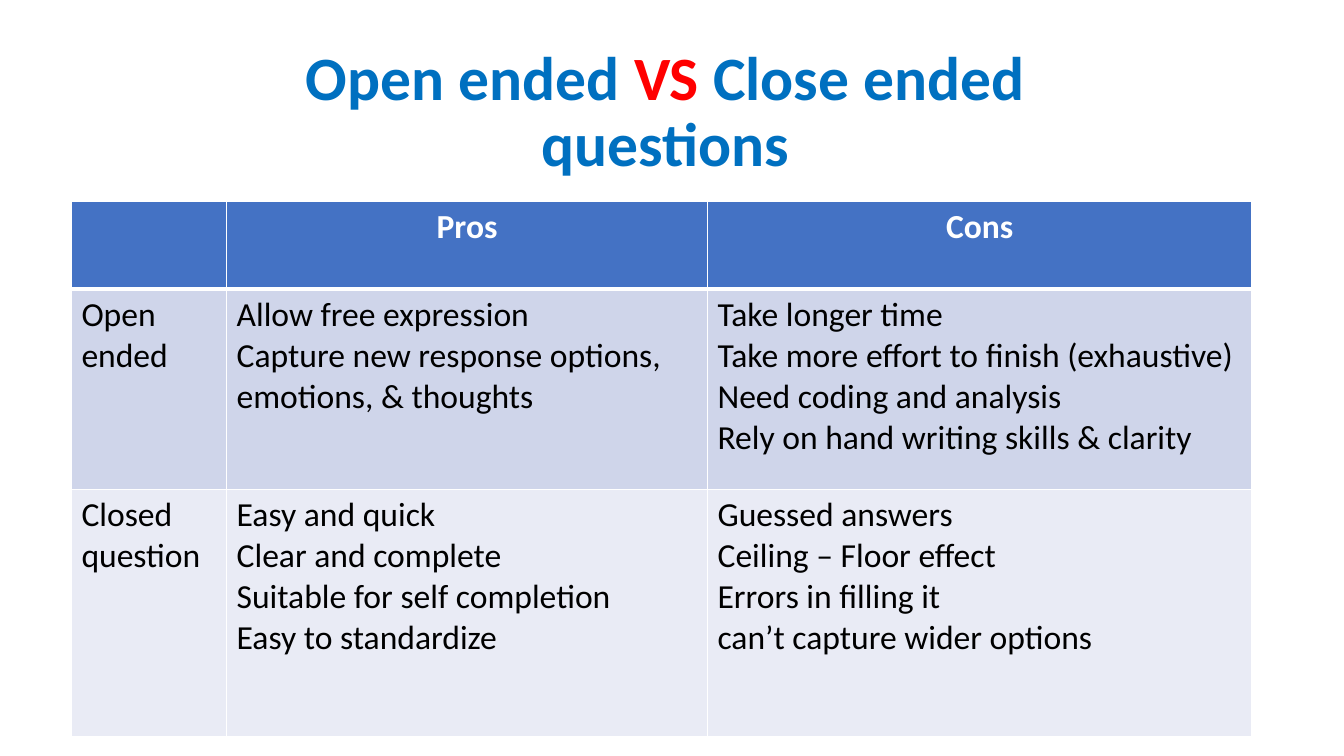
import pptx
import pptx.dml.color
import pptx.enum.text
import pptx.oxml
import pptx.oxml.ns
import pptx.util
from pptx.util import Cm

COLORS = {
    "title": "0070C0",
    "accent": "FF0000",
    "header": "4472C4",
    "open": "CFD5EA",
    "closed": "E9EBF5",
    "white": "FFFFFF",
    "black": "000000",
}

ROWS = [
    ("header", ["", "Pros", "Cons"]),
    ("open", [
        "Open ended",
        "Allow free expression\n"
        "Capture new response options, emotions, & thoughts",
        "Take longer time\n"
        "Take more effort to finish (exhaustive)\n"
        "Need coding and analysis\n"
        "Rely on hand writing skills & clarity",
    ]),
    ("closed", [
        "Closed question",
        "Easy and quick\n"
        "Clear and complete\n"
        "Suitable for self completion\n"
        "Easy to standardize",
        "Guessed answers\n"
        "Ceiling – Floor effect\n"
        "Errors in filling it\n"
        "can’t capture wider options",
    ]),
]


def rgb(name):
    return pptx.dml.color.RGBColor.from_string(COLORS[name])


class SlideBuilder:
    font = "Calibri"
    title_size = 44
    table_size = 24

    def __init__(self, prs):
        self.s = prs.slides.add_slide(prs.slide_layouts[6])

    def style_run(self, r, size, color, bold):
        r.font.name = self.font
        r.font.size = pptx.util.Pt(size)
        r.font.bold = bold
        r.font.color.rgb = rgb(color)

    def title(self, left, top, width, height, parts):
        """Add a centred title from (text, colour) parts; None breaks the line."""
        tf = self.s.shapes.add_textbox(left, top, width, height).text_frame
        tf.word_wrap = True
        tf.vertical_anchor = pptx.enum.text.MSO_ANCHOR.MIDDLE
        p = tf.paragraphs[0]
        p.alignment = pptx.enum.text.PP_ALIGN.CENTER
        p.line_spacing = 0.9
        for part in parts:
            if part is None:
                p.add_line_break()
                continue
            text, color = part
            r = p.add_run()
            r.text = text
            self.style_run(r, self.title_size, color, True)

    def borders(self, cell, top, bottom):
        """Draw white cell borders, with top and bottom widths in points."""
        tcPr = cell._tc.get_or_add_tcPr()
        for side, width in (("L", 1), ("R", 1), ("T", top), ("B", bottom)):
            tcPr.append(pptx.oxml.parse_xml(
                f'<a:ln{side} {pptx.oxml.ns.nsdecls("a")} w="{pptx.util.Pt(width)}">'
                f'<a:solidFill><a:srgbClr val="{COLORS["white"]}"/></a:solidFill>'
                f'</a:ln{side}>'))

    def table(self, left, top, widths, heights, rows):
        table = self.s.shapes.add_table(
            len(rows), len(widths), left, top, sum(widths), sum(heights)).table
        for column, width in zip(table.columns, widths):
            column.width = width
        for i, (fill, texts) in enumerate(rows):
            table.rows[i].height = heights[i]
            for j, text in enumerate(texts):
                self.cell(table.cell(i, j), text, fill, i)

    def cell(self, cell, text, fill, row):
        header = row == 0
        self.borders(cell, 3 if row == 1 else 1, 3 if header else 1)
        cell.fill.solid()
        cell.fill.fore_color.rgb = rgb(fill)
        cell.text_frame.text = text
        for p in cell.text_frame.paragraphs:
            if header:
                p.alignment = pptx.enum.text.PP_ALIGN.CENTER
            for r in p.runs:
                self.style_run(r, self.table_size,
                               "white" if header else "black", header)


def main():
    prs = pptx.Presentation()
    prs.slide_width, prs.slide_height = Cm(33.87), Cm(19.05)
    slide = SlideBuilder(prs)
    slide.title(Cm(2.34), Cm(1.02), Cm(29.21), Cm(3.68), [
        ("Open ended ", "title"),
        ("VS ", "accent"),
        ("Close ended ", "title"),
        None,
        ("questions ", "title"),
    ])
    slide.table(Cm(1.8), Cm(5.08),
                [Cm(3.91), Cm(12.12), Cm(13.72)],
                [Cm(2.21), Cm(5.05), Cm(6.22)], ROWS)
    prs.save("out.pptx")


if __name__ == "__main__":
    main()
